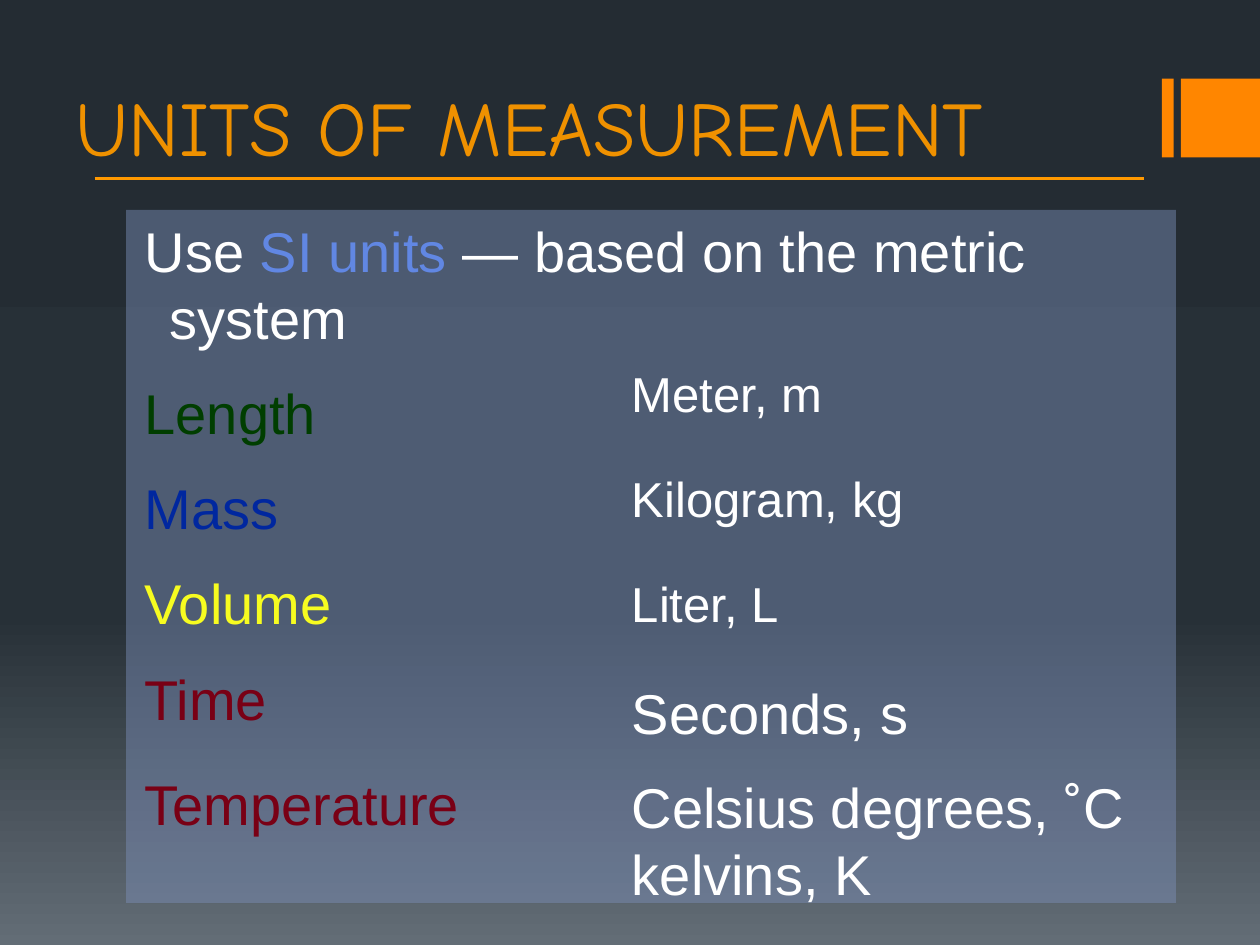
from copy import deepcopy
from dataclasses import dataclass

from lxml import etree
from pptx import Presentation
from pptx.dml.color import RGBColor
from pptx.enum import shapes, text
from pptx.oxml.ns import qn
from pptx.util import Pt


@dataclass(frozen=True)
class Theme:
    sky: tuple = ((0, "242C33"), (0.65, "273037"), (1, "636D76"))
    accent: str = "FF8600"
    title: str = "EF9100"
    rule: str = "FF9900"
    panel: str = "7B8EB8"
    white: str = "FFFFFF"
    term: str = "6187E3"
    green: str = "003E00"
    blue: str = "00279F"
    yellow: str = "F7FC20"
    red: str = "790015"
    head: str = "Comic Neue"
    body: str = "Arial"
    large: int = 44
    normal: int = 32
    small: int = 28


def write(para, words, size, color, font=Theme.body):
    run = para.add_run()
    run.text = words
    run.font.size = Pt(size)
    run.font.name = font
    run.font.color.rgb = RGBColor.from_string(color)


class Board:
    def __init__(self, slide, theme):
        self.slide = slide
        self.theme = theme

    def shade(self):
        fill = self.slide.background.fill
        fill.gradient()
        fill.gradient_angle = 270
        first = fill.gradient_stops[0]._gs
        first.addnext(deepcopy(first))
        for stop, (place, color) in zip(fill.gradient_stops, self.theme.sky):
            stop.position = place
            stop.color.rgb = RGBColor.from_string(color)

    def block(self, left, top, width, height, color, alpha=None):
        box = self.slide.shapes.add_shape(
            shapes.MSO_SHAPE.RECTANGLE, Pt(left), Pt(top), Pt(width), Pt(height))
        box.shadow.inherit = False
        box.fill.solid()
        box.fill.fore_color.rgb = RGBColor.from_string(color)
        box.line.fill.background()
        if alpha is not None:
            tone = box.fill._xPr.find(qn("a:solidFill"))[0]
            etree.SubElement(tone, qn("a:alpha"), val=str(alpha * 1000))
        return box

    def label(self, left, top, width, height, lines, size, color,
              font=Theme.body, wrap=False, anchor=text.MSO_ANCHOR.TOP):
        box = self.slide.shapes.add_textbox(
            Pt(left), Pt(top), Pt(width), Pt(height))
        frame = box.text_frame
        frame.word_wrap = wrap
        frame.vertical_anchor = anchor
        for i, line in enumerate(lines):
            para = frame.add_paragraph() if i else frame.paragraphs[0]
            write(para, line, size, color, font=font)

    def rule(self, left, right, top, color, weight):
        line = self.slide.shapes.add_connector(
            shapes.MSO_CONNECTOR.STRAIGHT, Pt(left), Pt(top), Pt(right), Pt(top))
        line.line.color.rgb = RGBColor.from_string(color)
        line.line.width = Pt(weight)
        etree.SubElement(line._element.spPr, qn("a:effectLst"))

    def panel(self, left, top, width, height, rows):
        box = self.block(left, top, width, height, self.theme.panel, alpha=47)
        frame = box.text_frame
        frame.word_wrap = True
        frame.vertical_anchor = text.MSO_ANCHOR.TOP
        for i, (runs, space, before) in enumerate(rows):
            para = frame.add_paragraph() if i else frame.paragraphs[0]
            para.alignment = text.PP_ALIGN.LEFT
            para.line_spacing = space
            para.space_before = Pt(before)
            props = para._p.get_or_add_pPr()
            props.set("marL", str(Pt(18)))
            props.set("indent", str(Pt(-14.4)))
            for words, color in runs:
                write(para, words, self.theme.normal, color)


def main():
    deck = Presentation()
    deck.slide_width, deck.slide_height = Pt(720), Pt(540)
    theme = Theme()
    board = Board(deck.slides.add_slide(deck.slide_layouts[6]), theme)
    board.shade()
    for left, width in ((664, 6.75), (674.75, 45.25)):
        board.block(left, 45, width, 45, theme.accent)
    board.label(36, 36, 624, 66, ["UNITS OF MEASUREMENT"], theme.large,
                theme.title, font=theme.head, wrap=True,
                anchor=text.MSO_ANCHOR.BOTTOM)

    intro = [("Use ", theme.white), ("SI units", theme.term),
             (" — based on the metric system", theme.white)]
    terms = (("Length", theme.green, 6.4), ("Mass", theme.blue, 6.4),
             ("Volume", theme.yellow, 6.4), ("Time", theme.red, 6.4),
             ("Temperature", theme.red, 12.4))
    rows = [(intro, 1.0, 6.4)]
    rows += [([(word, color)], 1.25, gap) for word, color, gap in terms]
    board.panel(72, 120, 600, 396, rows)
    board.rule(54, 654, 102, theme.rule, 1.5)

    units = (
        (204, 130, 41, ["Meter, m"], theme.small),
        (264, 184, 41, ["Kilogram, kg"], theme.small),
        (324, 108, 41, ["Liter, L"], theme.small),
        (384, 183, 45.5, ["Seconds, s"], theme.normal),
        (438, 311, 84, ["Celsius degrees, ˚C", "kelvins, K"], theme.normal),
    )
    for top, width, height, lines, size in units:
        board.label(354, top, width, height, lines, size, theme.white)
    deck.save("out.pptx")


if __name__ == "__main__":
    main()
